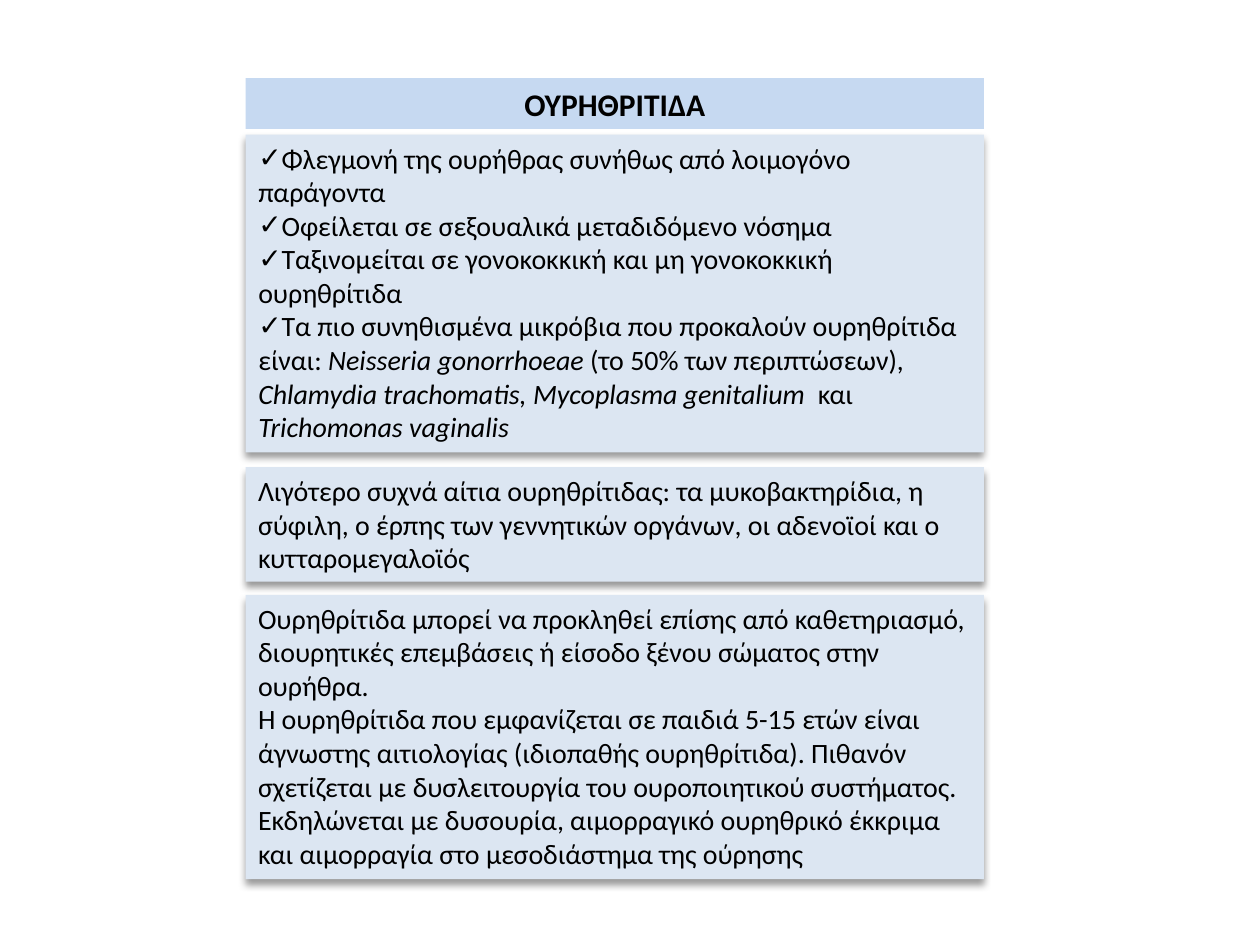
from lxml.etree import SubElement
from pptx import Presentation
from pptx.dml.color import RGBColor
from pptx.enum.text import MSO_ANCHOR as Anchor, MSO_AUTO_SIZE as AutoSize, PP_ALIGN as Align
from pptx.oxml.ns import qn
from pptx.util import Pt

LEFT, WIDTH = 140.4, 421.9
HEADING_FILL, PANEL_FILL, BLACK = "C6D9F1", "DCE6F2", "000000"
HEADING_FONT = {"name": "Calibri", "size": Pt(18), "bold": True}
BODY_FONT = {"name": "Calibri", "size": Pt(16), "bold": False}

HEADING = "ΟΥΡΗΘΡΙΤΙΔΑ"
# Each paragraph is a list of runs; every second run is italic.
MAIN_POINTS = [
    ["Φλεγμονή της ουρήθρας συνήθως από λοιμογόνο παράγοντα"],
    ["Οφείλεται σε σεξουαλικά μεταδιδόμενο νόσημα"],
    ["Ταξινομείται σε γονοκοκκική και μη γονοκοκκική ουρηθρίτιδα"],
    ["Τα πιο συνηθισμένα μικρόβια που προκαλούν ουρηθρίτιδα είναι: ",
     "Neisseria gonorrhoeae ", "(το 50% των περιπτώσεων)",
     ", Chlamydia trachomatis, Mycoplasma genitalium  ", "και ",
     "Trichomonas vaginalis"],
]
RARE_CAUSES = [
    ["Λιγότερο συχνά αίτια ουρηθρίτιδας: τα μυκοβακτηρίδια, η σύφιλη, ο έρπης "
     "των γεννητικών οργάνων, οι αδενοϊοί και ο κυτταρομεγαλοϊός"],
]
OTHER_CAUSES = [
    ["Ουρηθρίτιδα μπορεί να προκληθεί επίσης από καθετηριασμό, διουρητικές "
     "επεμβάσεις ή είσοδο ξένου σώματος στην ουρήθρα."],
    ["H ουρηθρίτιδα που εμφανίζεται σε παιδιά 5-15 ετών είναι άγνωστης "
     "αιτιολογίας (ιδιοπαθής ουρηθρίτιδα). Πιθανόν σχετίζεται με δυσλειτουργία "
     "του ουροποιητικού συστήματος. Εκδηλώνεται με δυσουρία, αιμορραγικό "
     "ουρηθρικό έκκριμα και αιμορραγία στο μεσοδιάστημα της ούρησης"],
]


def color(value):
    return RGBColor.from_string(value)


def set_values(target, values):
    for name, value in values.items():
        setattr(target, name, value)


def place(shape, top, height, fill):
    set_values(shape, {"left": Pt(LEFT), "top": Pt(top),
                       "width": Pt(WIDTH), "height": Pt(height)})
    shape.fill.solid()
    shape.fill.fore_color.rgb = color(fill)


def add_shadow(shape):
    effects = SubElement(shape.element.spPr, qn("a:effectLst"))
    shadow = SubElement(effects, qn("a:outerShdw"), blurRad=str(Pt(4)),
                        dist=str(Pt(3)), dir="5400000", rotWithShape="0")
    shade = SubElement(shadow, qn("a:srgbClr"), val=BLACK)
    SubElement(shade, qn("a:alpha"), val="40000")


def add_check_bullet(paragraph):
    """Put a tick in line with the text, without a hanging indent."""
    properties = paragraph._p.get_or_add_pPr()
    paragraph.space_before = Pt(0)
    properties.set("marL", "0")
    properties.set("indent", "0")
    SubElement(properties, qn("a:buFont"), typeface="Calibri")
    SubElement(properties, qn("a:buChar"), char="✓")


def write(shape, paragraphs, font, alignment=Align.LEFT, anchor=Anchor.TOP, bulleted=False):
    frame = shape.text_frame
    set_values(frame, {"word_wrap": True, "vertical_anchor": anchor,
                       "auto_size": AutoSize.NONE})
    for index, runs in enumerate(paragraphs):
        paragraph = frame.add_paragraph() if index else frame.paragraphs[0]
        paragraph.alignment = alignment
        if bulleted:
            add_check_bullet(paragraph)
        for position, text in enumerate(runs):
            run = paragraph.add_run()
            run.text = text
            set_values(run.font, {**font, "italic": position % 2 == 1})
            run.font.color.rgb = color(BLACK)


def fill_panel(shape, top, height, paragraphs, bulleted=False):
    place(shape, top, height, PANEL_FILL)
    add_shadow(shape)
    write(shape, paragraphs, BODY_FONT, bulleted=bulleted)


def add_panel(slide, top, height, paragraphs):
    box = slide.shapes.add_textbox(Pt(LEFT), Pt(top), Pt(WIDTH), Pt(height))
    fill_panel(box, top, height, paragraphs)


def main():
    presentation = Presentation()
    set_values(presentation, {"slide_width": Pt(720), "slide_height": Pt(540)})
    slide = presentation.slides.add_slide(presentation.slide_layouts[1])

    title = slide.shapes.title
    place(title, 44.6, 29.1, HEADING_FILL)
    write(title, [[HEADING]], HEADING_FONT, Align.CENTER, Anchor.MIDDLE)

    fill_panel(slide.placeholders[1], 77, 181.6, MAIN_POINTS, bulleted=True)
    add_panel(slide, 267, 65.4, RARE_CAUSES)
    add_panel(slide, 340, 162.4, OTHER_CAUSES)
    presentation.save("out.pptx")


if __name__ == "__main__":
    main()
